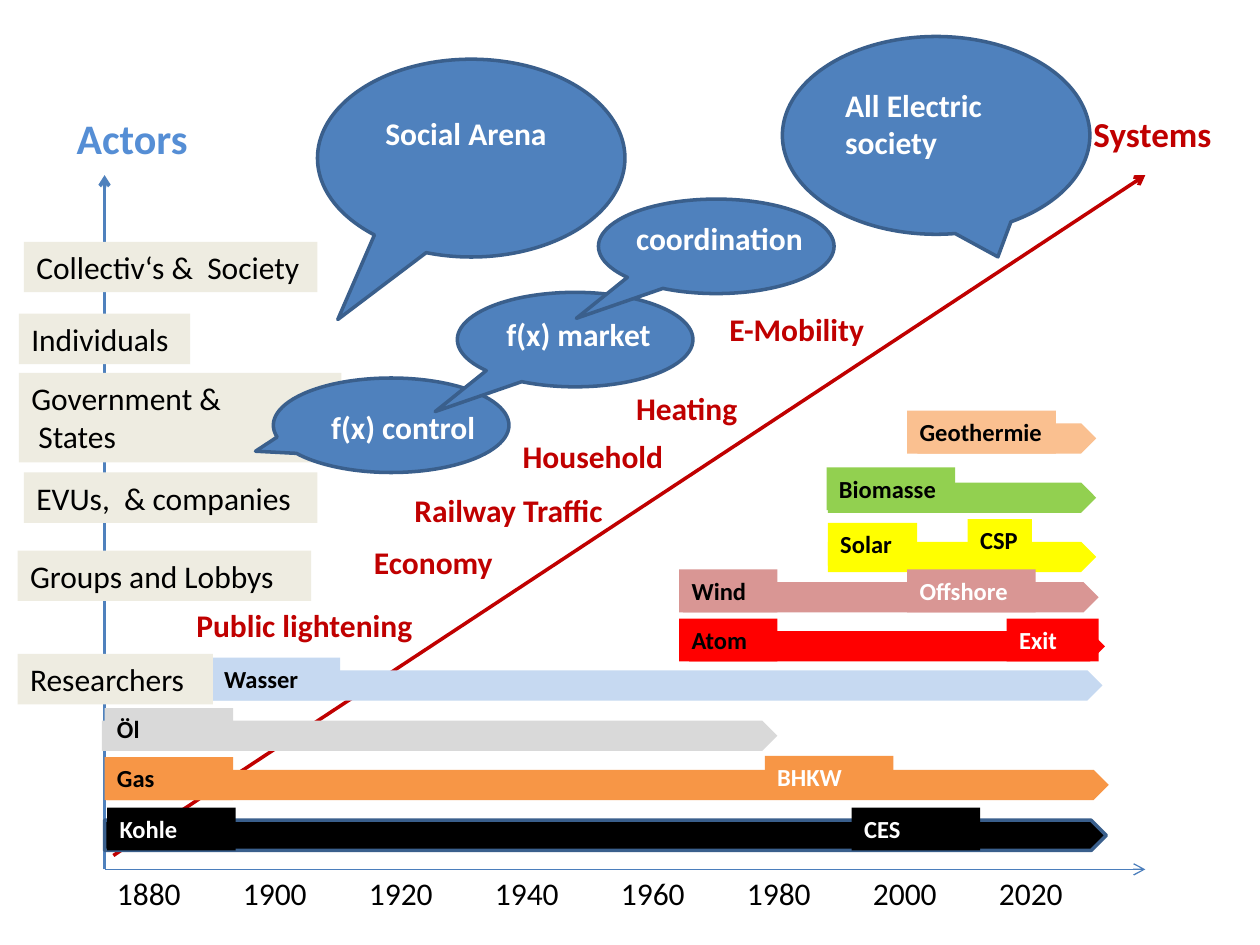
from lxml import etree
from pptx import Presentation
from pptx import util as u
from pptx.dml.color import RGBColor
from pptx.enum import shapes, text
from pptx.oxml.ns import qn

COLORS = {
    "blue": "4F81BD", "outline": "3A5F8C", "time": "4B7EBC", "actors": "558ED5",
    "dark_red": "C00000", "beige": "EEECE1", "black": "000000", "white": "FFFFFF",
    "orange": "F79646", "light_blue": "C6D9F1", "red": "FF0000", "rose": "D99694",
    "yellow": "FFFF00", "green": "92D050", "peach": "FAC090", "grey": "D9D9D9",
}
LABEL_HEIGHT, BAR_HEIGHT, LINE_HEIGHT = 0.34, 0.24, 0.4

# Bar left, top, width; label left, top, width (offsets from the chart origin)
SOURCES = [
    ("Geothermie", "peach", (6.45, 1.97, 1.42), (6.37, 1.87, 1.18)),
    ("Kohle", "black", (0, 5.12, 7.95), (0.02, 5.02, 1.02)),
    ("Gas", "orange", (0.02, 4.72, 7.95), (0, 4.62, 1.02)),
    ("Wasser", "light_blue", (0.85, 3.93, 7.07), (0.85, 3.83, 1.02)),
    ("Atom", "red", (4.64, 3.62, 3.3), (4.56, 3.52, 0.78)),
    ("Wind", "rose", (4.59, 3.23, 3.3), (4.56, 3.13, 0.78)),
    ("Solar", "yellow", (5.74, 2.91, 2.13), (5.74, 2.76, 0.71)),
    ("Biomasse", "green", (5.74, 2.44, 2.13), (5.73, 2.32, 1.02)),
    ("Öl", "grey", (-0.02, 4.33, 5.36), (0, 4.23, 1.02)),
]
MILESTONES = [
    ("Offshore", "rose", "white", (6.37, 3.13, 1.02)),
    ("BHKW", "orange", "white", (5.24, 4.61, 1.02)),
    ("CES", "black", "white", (5.93, 5.02, 1.02)),
    ("CSP", "yellow", "black", (6.85, 2.73, 0.51)),
    ("Exit", "red", "white", (7.16, 3.52, 0.73)),
]
SYSTEMS = [
    ("Public lightening", 0.63, 3.37), ("Economy", 2.04, 2.87),
    ("Railway Traffic", 2.36, 2.46), ("Household", 3.22, 2.03),
    ("Heating", 4.12, 1.65), ("E-Mobility", 4.86, 1.02),
]
# Left, top, width, height (offsets from the actor column)
ACTORS = [
    ("Collectiv‘s &  Society", 0.05, 0, 2.33, LINE_HEIGHT),
    ("Individuals", 0.01, 0.57, 1.36, LINE_HEIGHT),
    ("Government &\n States", 0.01, 1.04, 2.56, 0.71),
    ("EVUs,  & companies", 0.05, 1.83, 2.33, LINE_HEIGHT),
    ("Groups and Lobbys", 0, 2.45, 2.33, LINE_HEIGHT),
    ("Researchers", 0, 3.27, 1.55, LINE_HEIGHT),
]
# Bubble box, pointer, text box as offsets from the bubble
CALLOUTS = [
    ("All Electric society", (6.21, 0.29, 2.44, 1.57), (0.201, 0.614), (0.4, 0.34, 1.57, 0.71)),
    ("Social Arena", (2.52, 0.47, 2.44, 1.57), (-0.434, 0.816), (0.44, 0.39, 1.57, 0.4)),
    ("f(x) control", (2.17, 3, 1.87, 0.75), (-0.576, 0.275), (0.36, 0.19, 1.57, 0.4)),
    ("f(x) market", (3.63, 2.32, 1.87, 0.75), (-0.594, 0.762), (0.29, 0.13, 1.81, 0.4)),
    ("coordination", (4.75, 1.58, 1.87, 0.75), (-0.594, 0.762), (0.2, 0.11, 1.7, 0.4)),
]


def color(name):
    return RGBColor.from_string(COLORS[name])


def inches(box):
    return [u.Inches(value) for value in box]


def write(shape, content, size, font_color, bold=False):
    frame = shape.text_frame
    frame.text = content
    frame.word_wrap = True
    frame.vertical_anchor = text.MSO_ANCHOR.TOP
    frame.margin_right = u.Inches(0.05)
    for paragraph in frame.paragraphs:
        paragraph.alignment = text.PP_ALIGN.LEFT
        for run in paragraph.runs:
            run.font.name = "Calibri"
            run.font.size = u.Pt(size)
            run.font.bold = bold
            run.font.color.rgb = color(font_color)


def add_text(slide, box, content, size, font_color, bold=True):
    write(slide.shapes.add_textbox(*inches(box)), content, size, font_color, bold)


def add_shape(slide, kind, box, fill, outline=None):
    shape = slide.shapes.add_shape(kind, *inches(box))
    shape.shadow.inherit = False
    shape.fill.solid()
    shape.fill.fore_color.rgb = color(fill)
    if outline:
        shape.line.color.rgb = color(outline)
        shape.line.width = u.Pt(2)
    else:
        shape.line.fill.background()
    return shape


def add_label(slide, box, content, fill, size, font_color, bold):
    label = add_shape(slide, shapes.MSO_SHAPE.RECTANGLE, box, fill)
    write(label, content, size, font_color, bold)


def add_arrow(slide, start, end, line_color, width):
    arrow = slide.shapes.add_connector(
        shapes.MSO_CONNECTOR.STRAIGHT, *inches(start + end))
    arrow.line.color.rgb = color(line_color)
    arrow.line.width = u.Pt(width)
    etree.SubElement(arrow.line._get_or_add_ln(), qn("a:tailEnd"), type="arrow")
    etree.SubElement(arrow._element.spPr, qn("a:effectLst"))


def draw_axes(slide, left, top, width, height):
    right, bottom = left + width, top + height
    add_arrow(slide, (left, bottom), (left, top), "blue", 2)
    add_arrow(slide, (left, bottom), (right, bottom), "time", 0.75)
    add_arrow(slide, (left + 0.07, bottom - 0.11), (right, top), "dark_red", 2)
    years = "\t".join(str(year) for year in range(1880, 2021, 20))
    add_text(slide, (left, bottom - 0.01, 8.9, LINE_HEIGHT), years, 18, "black", False)
    add_text(slide, (left - 0.32, top - 0.55, 1.68, 0.5), "Actors", 24, "actors")
    add_text(slide, (right - 0.51, top - 0.55, 1.22, 0.44), "Systems", 20, "dark_red")


def draw_sources(slide, left, top):
    def place(box, height):
        return left + box[0], top + box[1], box[2], height

    for name, fill, bar, label in SOURCES:
        outline = "outline" if name == "Kohle" else None
        add_shape(slide, shapes.MSO_SHAPE.PENTAGON, place(bar, BAR_HEIGHT), fill, outline)
        font_color = "white" if fill == "black" else "black"
        add_label(slide, place(label, LABEL_HEIGHT), name, fill, 14, font_color, True)
    for name, fill, font_color, label in MILESTONES:
        add_label(slide, place(label, LABEL_HEIGHT), name, fill, 14, font_color, True)


def draw_systems(slide, left, top):
    for name, across, down in SYSTEMS:
        add_text(slide, (left + across, top + down, 2.13, LINE_HEIGHT), name, 18, "dark_red")


def draw_actors(slide, left, top):
    for name, across, down, width, height in ACTORS:
        add_label(slide, (left + across, top + down, width, height),
                  name, "beige", 18, "black", False)


def draw_callout(slide, content, box, pointer, text_box):
    bubble = add_shape(slide, shapes.MSO_SHAPE.OVAL_CALLOUT, box, "blue", "outline")
    for index, value in enumerate(pointer):
        bubble.adjustments[index] = value
    across, down, width, height = text_box
    add_text(slide, (box[0] + across, box[1] + down, width, height), content, 18, "white")


def main():
    presentation = Presentation()
    presentation.slide_width = u.Inches(10)
    presentation.slide_height = u.Inches(7.5)
    slide = presentation.slides.add_slide(presentation.slide_layouts[6])
    left, top = 0.83, 1.39
    draw_axes(slide, left, top, 8.26, 5.51)
    draw_sources(slide, left, top)
    draw_systems(slide, left, top)
    draw_actors(slide, 0.14, 1.92)
    for callout in CALLOUTS:
        draw_callout(slide, *callout)
    presentation.save("out.pptx")


if __name__ == "__main__":
    main()
